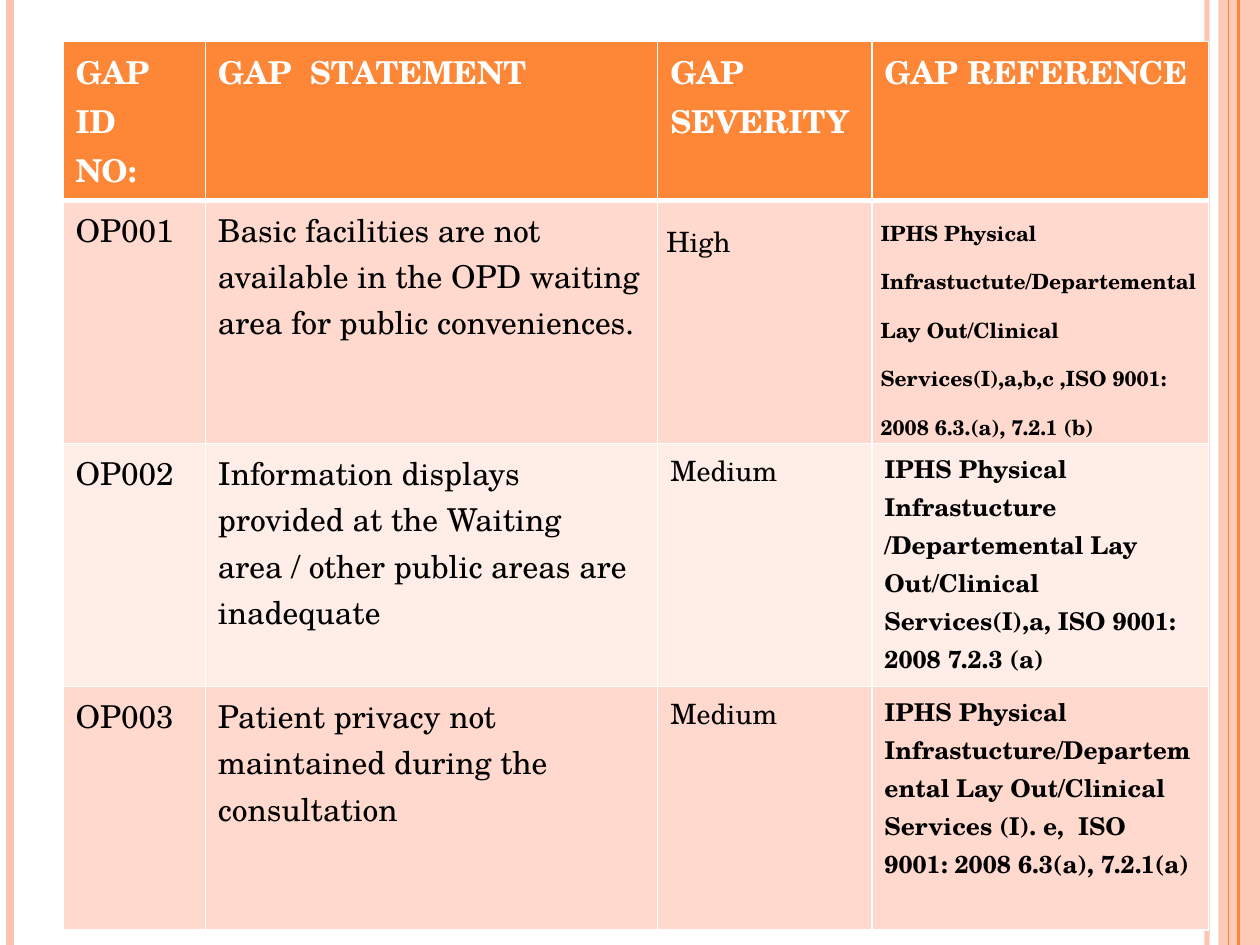
from dataclasses import dataclass

from lxml.etree import SubElement
from pptx import Presentation
from pptx.dml.color import RGBColor as Color
from pptx.enum.shapes import MSO_CONNECTOR as Connector, MSO_SHAPE as Shape
from pptx.oxml import parse_xml
from pptx.oxml.ns import nsdecls, qn
from pptx.util import Inches, Pt


@dataclass(frozen=True)
class Theme:
    font: str = "TeX Gyre Schola"
    orange: str = "FE8637"
    peach: str = "FEC3AE"
    band_dark: str = "FFD9CE"
    band_light: str = "FFEDE8"
    white: str = "FFFFFF"
    black: str = "000000"
    large: int = 18
    medium: int = 16
    reference: int = 14
    small: int = 12


theme = Theme()


def set_alpha(element, percent):
    """Make every solid colour inside the element partly transparent."""
    for color in element.iter(qn("a:srgbClr")):
        SubElement(color, qn("a:alpha"), val=str(percent * 1000))


def write_cell(cell, text, *, size, color, fill, bold=False, loose=False, top=1, bottom=1):
    """Fill and border a cell; loose gives it wide lines and tight margins."""
    cell.fill.solid()
    cell.fill.fore_color.rgb = Color.from_string(fill)
    if loose:
        cell.margin_left = cell.margin_right = Inches(0.07)
        cell.margin_top = cell.margin_bottom = 0
    para = cell.text_frame.paragraphs[0]
    if loose:
        para.line_spacing = 1.5
        para.space_after = Pt(10)
    span = para.add_run()
    span.text = text
    span.font.name = theme.font
    span.font.size = Pt(size)
    span.font.bold = bold
    span.font.color.rgb = Color.from_string(color)
    properties = cell._tc.get_or_add_tcPr()
    borders = {"lnL": 1, "lnR": 1, "lnT": top, "lnB": bottom}
    for position, (side, width) in enumerate(borders.items()):
        properties.insert(position, parse_xml(
            f'<a:{side} {nsdecls("a")} w="{Pt(width)}"><a:solidFill>'
            f'<a:srgbClr val="{theme.white}"/></a:solidFill></a:{side}>'))


deck = Presentation()
deck.slide_width, deck.slide_height = Inches(10), Inches(7.5)
page = deck.slides.add_slide(deck.slide_layouts[6])

# Side stripes: x, width in points, colour, opacity
stripes = [
    (9.58, 3, theme.peach, 93),
    (0.08, 4.5, theme.peach, 100),
    (9.83, 1.5, theme.orange, 100),
    (9.75, 0.75, theme.orange, 100),
]
band = page.shapes.add_shape(Shape.RECTANGLE, Inches(9.67), 0, Inches(0.33), deck.slide_height)
band.shadow.inherit = False
band.fill.solid()
band.fill.fore_color.rgb = Color.from_string(theme.peach)
band.line.fill.background()
set_alpha(band.fill._xPr, 87)

for x, width, color, opacity in stripes:
    stripe = page.shapes.add_connector(
        Connector.STRAIGHT, Inches(x), 0, Inches(x), deck.slide_height)
    stripe.line.width = Pt(width)
    stripe.line.color.rgb = Color.from_string(color)
    properties = stripe._element.spPr
    if opacity < 100:
        set_alpha(properties, opacity)
    SubElement(properties, qn("a:effectLst"))

# Gap table
headings = ["GAP ID  NO:", "GAP  STATEMENT", "GAP SEVERITY", "GAP REFERENCE"]
gaps = [
    ("OP001",
     "Basic facilities are not available in the OPD waiting area for public conveniences.",
     "High",
     "IPHS Physical Infrastuctute/Departemental Lay Out/Clinical Services(I),a,b,c ,"
     "ISO 9001: 2008 6.3.(a), 7.2.1 (b)"),
    ("OP002",
     "Information displays provided at the Waiting area / other public areas are inadequate",
     "Medium",
     "IPHS Physical Infrastucture /Departemental Lay Out/Clinical Services(I),a, "
     "ISO 9001: 2008 7.2.3 (a)"),
    ("OP003",
     "Patient privacy not maintained during the consultation",
     "Medium",
     "IPHS Physical Infrastucture/Departemental Lay Out/Clinical Services (I). e,  "
     "ISO 9001: 2008 6.3(a), 7.2.1(a)"),
]
column_widths = [1.13, 3.59, 1.7, 2.67]
row_heights = [0.96] + [1.93] * len(gaps)

table = page.shapes.add_table(
    len(row_heights), len(column_widths), Inches(0.5), Inches(0.33),
    Inches(sum(column_widths)), Inches(sum(row_heights))).table
for column, width in zip(table.columns, column_widths):
    column.width = Inches(width)
for row, height in zip(table.rows, row_heights):
    row.height = Inches(height)

for column, heading in enumerate(headings):
    write_cell(table.cell(0, column), heading, size=theme.large, color=theme.white,
               fill=theme.orange, bold=True, bottom=3)

for row, gap in enumerate(gaps, start=1):
    first = row == 1
    reference_size = theme.small if first else theme.reference
    sizes = [theme.large, theme.large, theme.medium, reference_size]
    for column, (text, size) in enumerate(zip(gap, sizes)):
        write_cell(table.cell(row, column), text, size=size, color=theme.black,
                   fill=theme.band_dark if row % 2 else theme.band_light,
                   bold=column == 3, loose=first and column >= 2,
                   top=3 if first else 1)

deck.save("out.pptx")
